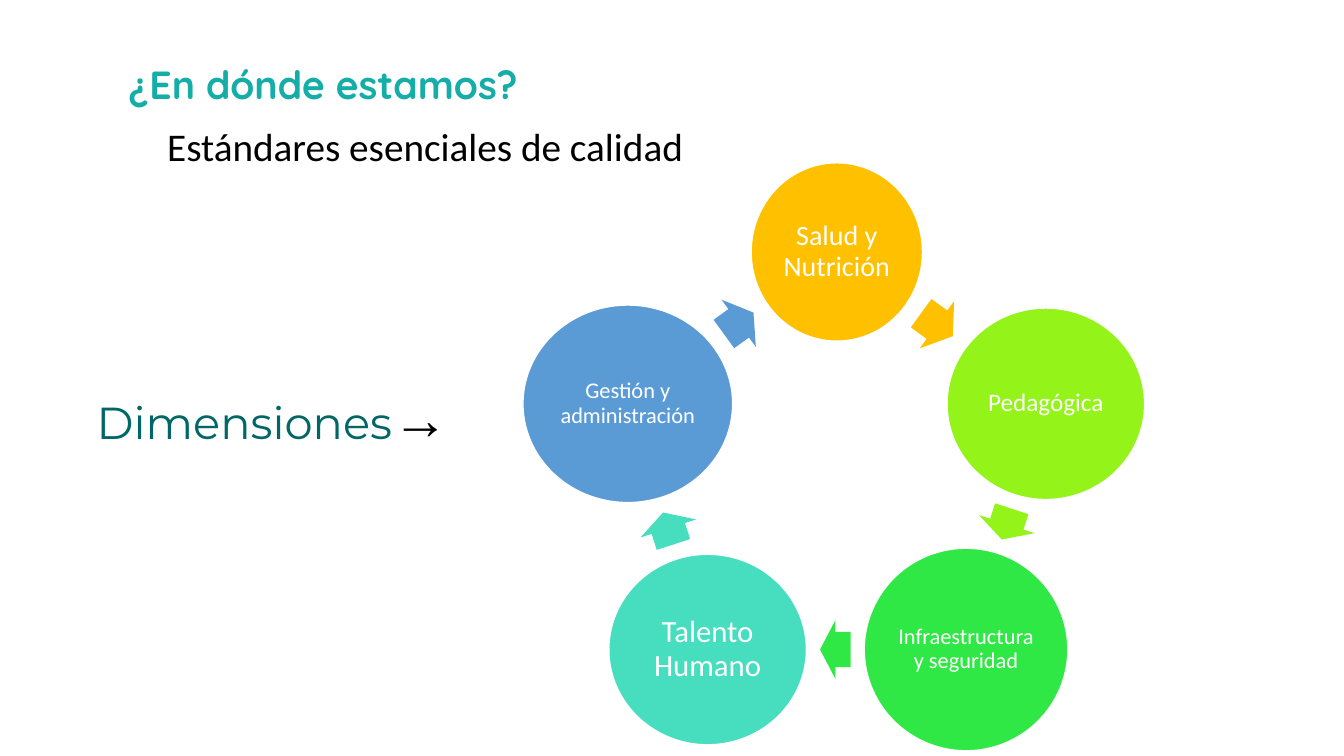
"""Build the slide that shows the five quality dimensions as a cycle."""
from dataclasses import dataclass
from math import cos, hypot, radians, sin

from pptx import Presentation
from pptx.dml.color import RGBColor
from pptx.enum.shapes import MSO_SHAPE
from pptx.enum.text import MSO_ANCHOR, MSO_AUTO_SIZE, PP_ALIGN
from pptx.util import Inches, Pt

ELLIPSE, ARROW = MSO_SHAPE.OVAL, MSO_SHAPE.RIGHT_ARROW
TOP, MIDDLE = MSO_ANCHOR.TOP, MSO_ANCHOR.MIDDLE
CENTER, JUSTIFY, LEFT = PP_ALIGN.CENTER, PP_ALIGN.JUSTIFY, PP_ALIGN.LEFT
NO_AUTOFIT = MSO_AUTO_SIZE.NONE

CENTER_X, CENTER_Y, RADIUS = 8.3, 4.68, 2.18
ARROW_HEIGHT, ARROW_SHARE = 0.58, 0.53


@dataclass(frozen=True)
class Theme:
    """Colours, fonts and type sizes of the slide."""
    title: str = "14ADA8"
    label: str = "006666"
    black: str = "000000"
    white: str = "FFFFFF"
    body_font: str = "Calibri"
    title_font: str = "Quicksand"
    label_font: str = "Montserrat"
    arrow_font: str = "Times New Roman"
    heading_size: int = 28
    label_size: int = 32
    arrow_size: int = 40
    spacing: float = 0.9


@dataclass(frozen=True)
class Dimension:
    """One circle of the cycle, sized in inches."""
    text: str
    width: float
    height: float
    color: str
    size: int

    def reach(self, dx: float, dy: float) -> float:
        """Return the distance from the centre to the edge along a unit vector."""
        return 1 / hypot(2 * dx / self.width, 2 * dy / self.height)


THEME = Theme()
DIMENSIONS = (
    Dimension("Salud y Nutrición", 1.7, 1.77, "FFC000", 20),
    Dimension("Pedagógica", 1.96, 1.9, "94F319", 18),
    Dimension("Infraestructura y seguridad", 2.02, 2.01, "30E845", 16),
    Dimension("Talento Humano", 1.96, 1.89, "46DEBF", 22),
    Dimension("Gestión y administración", 2.08, 1.96, "5B9BD5", 16),
)
STEP = 360 / len(DIMENSIONS)


def set_font(font, name: str, size: int, color: str, bold: bool = False) -> None:
    """Format a paragraph or run font."""
    font.name, font.size, font.bold = name, Pt(size), bold
    font.color.rgb = RGBColor.from_string(color)


def place(s, left: float, top: float, width: float, height: float) -> None:
    """Move and size a shape in inches."""
    s.left, s.top = Inches(left), Inches(top)
    s.width, s.height = Inches(width), Inches(height)


def prepare(tf, anchor, align):
    """Set up a wrapping text frame and return its first paragraph."""
    tf.word_wrap, tf.auto_size, tf.vertical_anchor = True, NO_AUTOFIT, anchor
    p = tf.paragraphs[0]
    p.alignment = align
    return p


def add_centered(slide, kind, x: float, y: float, width: float, height: float, color: str):
    """Add a filled shape centred on a point."""
    s = slide.shapes.add_shape(kind, Inches(x - width / 2), Inches(y - height / 2),
                               Inches(width), Inches(height))
    s.shadow.inherit = False
    s.fill.solid()
    s.fill.fore_color.rgb = RGBColor.from_string(color)
    s.line.fill.background()
    return s


def ring_point(index: int) -> tuple[float, float]:
    """Return the centre of a circle, clockwise from the top."""
    angle = radians(index * STEP)
    return CENTER_X + RADIUS * sin(angle), CENTER_Y - RADIUS * cos(angle)


def add_circle(slide, index: int, dim: Dimension) -> None:
    """Draw one dimension with its name."""
    s = add_centered(slide, ELLIPSE, *ring_point(index), dim.width, dim.height, dim.color)
    s.line.color.rgb = RGBColor.from_string(THEME.white)
    s.line.width = Pt(1)
    tf = s.text_frame
    tf.margin_left = tf.margin_right = tf.margin_top = tf.margin_bottom = Inches(0.02)
    p = prepare(tf, MIDDLE, CENTER)
    p.text, p.line_spacing = dim.text, THEME.spacing
    set_font(p.font, THEME.body_font, dim.size, THEME.white)


def add_arrow(slide, index: int, dim: Dimension, following: Dimension) -> None:
    """Draw the arrow in the middle of the gap between two circles."""
    (x1, y1), (x2, y2) = ring_point(index), ring_point(index + 1)
    chord = hypot(x2 - x1, y2 - y1)
    dx, dy = (x2 - x1) / chord, (y2 - y1) / chord
    start, end = dim.reach(dx, dy), chord - following.reach(dx, dy)
    middle = (start + end) / 2
    s = add_centered(slide, ARROW, x1 + dx * middle, y1 + dy * middle,
                     (end - start) * ARROW_SHARE, ARROW_HEIGHT, dim.color)
    s.adjustments[0], s.adjustments[1] = 0.6, 0.5
    s.rotation = STEP * (index + 0.5)


def add_texts(slide) -> None:
    """Write the title, the subtitle and the label beside the cycle."""
    title = slide.shapes.title
    place(title, 0.92, 0.6, 4.57, 0.57)
    p = prepare(title.text_frame, TOP, CENTER)
    p.text, p.line_spacing = "¿En dónde estamos?", THEME.spacing
    set_font(p.font, THEME.title_font, THEME.heading_size, THEME.title, True)

    subtitle = slide.shapes.add_textbox(Inches(1.56), Inches(1.16), Inches(7.84), Inches(0.57))
    p = prepare(subtitle.text_frame, MIDDLE, JUSTIFY)
    p.text = "Estándares esenciales de calidad"
    set_font(p.font, THEME.body_font, THEME.heading_size, THEME.black)

    label = slide.shapes.add_textbox(Inches(0.86), Inches(3.83), Inches(4.06), Inches(0.75))
    p = prepare(label.text_frame, TOP, LEFT)
    p.line_spacing, p.space_before = THEME.spacing, Pt(10)
    for text, font, size, color in (
        ("Dimensiones", THEME.label_font, THEME.label_size, THEME.label),
        ("→", THEME.arrow_font, THEME.arrow_size, THEME.black),
    ):
        r = p.add_run()
        r.text = text
        set_font(r.font, font, size, color)


def main() -> None:
    """Create and save the presentation."""
    prs = Presentation()
    prs.slide_width, prs.slide_height = Inches(13.33), Inches(7.5)
    slide = prs.slides.add_slide(prs.slide_layouts.get_by_name("Title Only"))
    for index, dim in enumerate(DIMENSIONS):
        add_circle(slide, index, dim)
        add_arrow(slide, index, dim, DIMENSIONS[(index + 1) % len(DIMENSIONS)])
    add_texts(slide)
    prs.save("out.pptx")


if __name__ == "__main__":
    main()
